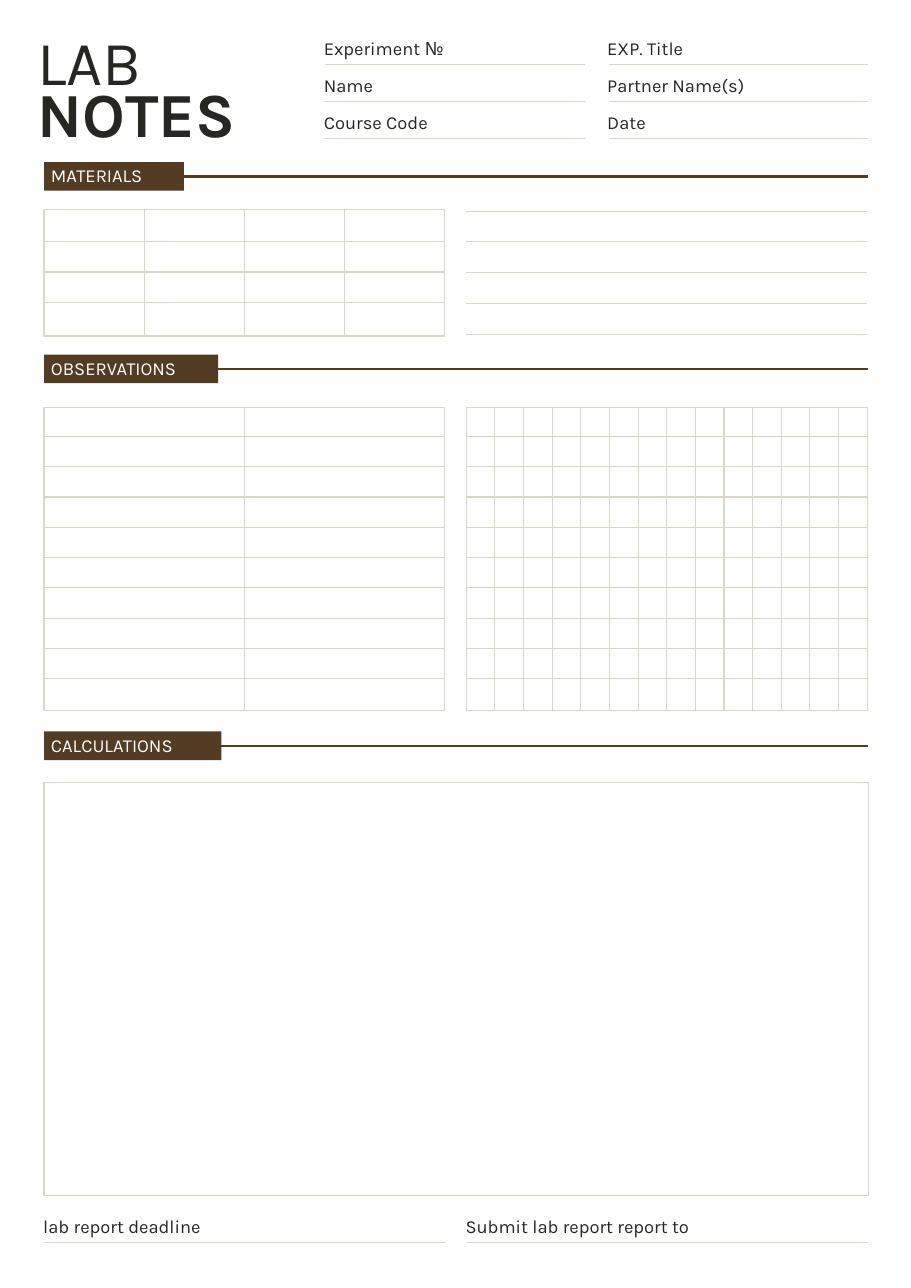
from pptx import Presentation
from pptx.dml.color import RGBColor
from pptx.enum.shapes import MSO_CONNECTOR, MSO_SHAPE
from pptx.enum.text import MSO_AUTO_SIZE
from pptx.oxml.ns import qn
from pptx.util import Pt

TITLE = [("LAB", False), ("NOTES", True)]
HEADER_FIELDS = [
    ["Experiment №", "Name", "Course Code"],
    ["EXP. Title", "Partner Name(s)", "Date"],
]
FOOTER_FIELDS = ["lab report deadline", "Submit lab report report to"]
SECTIONS = [  # label, top, tab width
    ("MATERIALS", 105.9, 91.4),
    ("OBSERVATIONS", 231.7, 113.8),
    ("CALCULATIONS", 478, 115.9),
]

INK, BROWN, RULE, WHITE = "242722", "533C24", "D9D8C8", "FFFFFF"
LEFT, RIGHT = 28.8, 567.4
HALF_WIDTH = 262
HALF_LEFTS = [LEFT, 304.8]
HEADER_LEFTS, HEADER_TOPS = [211.7, 396.9], [28.1, 52.6, 76.3]
HEADER_RULE = 169.6
FOOTER_TOP = 798.2
MATERIALS_TOP, MATERIALS_ROW = 136.8, 20.1
OBSERVATIONS_TOP, OBSERVATIONS_ROW = 266.5, 19.8

presentation = Presentation()
presentation.slide_width, presentation.slide_height = Pt(595.44), Pt(841.68)
slide = presentation.slides.add_slide(presentation.slide_layouts[6])
shapes = slide.shapes


def rgb(color):
    return RGBColor.from_string(color)


def add_text(left, top, width, height, lines, size=12, color=INK):
    """Place lines given as (wording, bold) pairs in a box without insets."""
    frame = shapes.add_textbox(Pt(left), Pt(top), Pt(width), Pt(height)).text_frame
    settings = {
        "margin_left": 0, "margin_top": 0, "margin_right": 0, "margin_bottom": 0,
        "word_wrap": True, "auto_size": MSO_AUTO_SIZE.SHAPE_TO_FIT_TEXT,
    }
    for name, value in settings.items():
        setattr(frame, name, value)
    for index, (wording, bold) in enumerate(lines):
        paragraph = frame.add_paragraph() if index else frame.paragraphs[0]
        paragraph.line_spacing = 0.7
        run = paragraph.add_run()
        run.text = wording
        for name, value in {"name": "Karla", "size": Pt(size), "bold": bold}.items():
            setattr(run.font, name, value)
        run.font.color.rgb = rgb(color)


def add_line(x1, y1, x2, y2, color=RULE, weight=0.75):
    line = shapes.add_connector(
        MSO_CONNECTOR.STRAIGHT, Pt(x1), Pt(y1), Pt(x2), Pt(y2))
    line.line.color.rgb = rgb(color)
    line.line.width = Pt(weight)
    properties = line._element.spPr
    properties.append(properties.makeelement(qn("a:effectLst"), {}))


def add_box(left, top, width, height, fill=None):
    """Draw a filled tab, or an outlined frame when no fill is given."""
    box = shapes.add_shape(
        MSO_SHAPE.RECTANGLE, Pt(left), Pt(top), Pt(width), Pt(height))
    box.shadow.inherit = False
    if fill:
        box.fill.solid()
        box.fill.fore_color.rgb = rgb(fill)
        box.line.fill.background()
    else:
        box.fill.background()
        box.line.color.rgb = rgb(RULE)
        box.line.width = Pt(0.75)


def add_grid(left, top, height, columns, rows, first_row, row_step):
    add_box(left, top, HALF_WIDTH, height)
    for row in range(rows - 1):
        y = top + first_row + row * row_step
        add_line(left, y, left + HALF_WIDTH, y)
    for column in range(1, columns):
        x = left + column * HALF_WIDTH / columns
        add_line(x, top, x, top + height)


def add_field(label, left, top, rule_width):
    add_text(left, top, 164, 10, [(label, False)])
    add_line(left + 1, top + 14, left + 1 + rule_width, top + 14)


add_text(24.5, 28.1, 173.5, 69.8, TITLE, size=41)

for left, labels in zip(HEADER_LEFTS, HEADER_FIELDS):
    for top, label in zip(HEADER_TOPS, labels):
        add_field(label, left, top, HEADER_RULE)

for label, top, tab_width in SECTIONS:
    add_line(100.8, top + 9.4, RIGHT, top + 9.4, BROWN, 1.5)
    add_box(LEFT, top, tab_width, 18.7, BROWN)
    add_text(33.3, top + 5.4, 90, 10, [(label, False)], color=WHITE)

add_grid(HALF_LEFTS[0], MATERIALS_TOP, 82.8, 4, 4, 20.9, MATERIALS_ROW)
for row in range(5):
    y = MATERIALS_TOP + 1.2 + row * MATERIALS_ROW
    add_line(HALF_LEFTS[1], y, HALF_LEFTS[1] + HALF_WIDTH, y)

for left, columns in zip(HALF_LEFTS, (2, 14)):
    add_grid(left, OBSERVATIONS_TOP, 198, columns, 10, 18.7, OBSERVATIONS_ROW)

add_box(LEFT, 511.2, RIGHT - LEFT, 270)

for left, label in zip(HALF_LEFTS, FOOTER_FIELDS):
    add_field(label, left - 0.5, FOOTER_TOP, HALF_WIDTH)

presentation.save("out.pptx")
